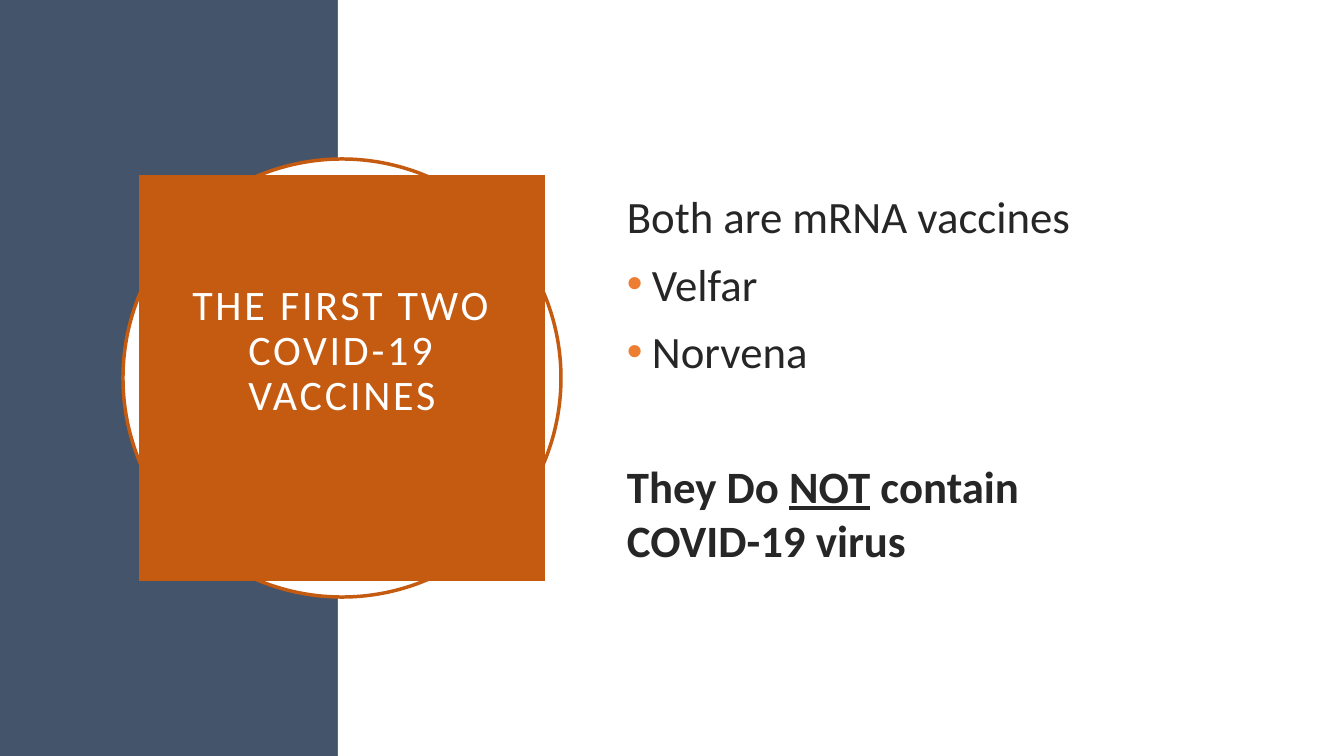
from lxml.etree import SubElement
from pptx import Presentation
from pptx.dml.color import RGBColor
from pptx.enum.shapes import MSO_SHAPE as Preset
from pptx.enum.text import MSO_ANCHOR as Anchor, PP_ALIGN as Align
from pptx.oxml.ns import qn
from pptx.util import Pt

PX = 914400 / 100.8
WIDTH, HEIGHT, SIDEBAR = 1344, 756, 338
NAVY, ORANGE, BRIGHT, WHITE, INK = "44546A", "C55A11", "ED7D31", "FFFFFF", "262626"


def px(length):
    """Turn whole pixels into EMU."""
    return round(length * PX)


def paint(color_format, code):
    """Set a colour from its hex string."""
    color_format.rgb = RGBColor.from_string(code)


def add_panel(slide, preset, box, fill, outline=None):
    """Add a filled shape, outlined only if a colour is given."""
    panel = slide.shapes.add_shape(preset, *map(px, box))
    panel.shadow.inherit = False
    panel.fill.solid()
    paint(panel.fill.fore_color, fill)
    if outline:
        paint(panel.line.color, outline)
        panel.line.width = Pt(2.5)
    else:
        panel.line.fill.background()
    return panel


def set_frame(frame, **margins):
    """Wrap and vertically centre a text frame, with margins in pixels."""
    frame.word_wrap = True
    frame.vertical_anchor = Anchor.MIDDLE
    for side, length in margins.items():
        setattr(frame, f"margin_{side}", px(length))


def add_run(paragraph, text, color, **formats):
    """Add a Calibri run with the given font values."""
    run = paragraph.add_run()
    run.text = text
    paint(run.font.color, color)
    for name, value in {"name": "Calibri", **formats}.items():
        setattr(run.font, name, value)
    return run


def add_bullet(paragraph):
    """Give a paragraph a hanging orange bullet."""
    properties = paragraph._p.get_or_add_pPr()
    properties.set("marL", str(px(25)))
    properties.set("indent", str(-px(25)))
    color = SubElement(properties, qn("a:buClr"))
    SubElement(color, qn("a:srgbClr"), val=BRIGHT)
    SubElement(properties, qn("a:buFont"), typeface="Arial")
    SubElement(properties, qn("a:buChar"), char="•")


def add_title(slide, box, text):
    """Add the orange title block with spaced capitals."""
    block = add_panel(slide, Preset.RECTANGLE, box, ORANGE)
    set_frame(block.text_frame, left=20, right=20, top=20, bottom=72)
    heading = block.text_frame.paragraphs[0]
    heading.alignment = Align.CENTER
    heading.line_spacing = 0.9
    run = add_run(heading, text, WHITE, size=Pt(30))
    run.font._element.set("spc", "200")


def add_body(slide, box, lines):
    """Add the body text from (space before, bulleted, runs) lines."""
    frame = slide.shapes.add_textbox(*map(px, box)).text_frame
    set_frame(frame)
    for index, (gap, bulleted, runs) in enumerate(lines):
        line = frame.add_paragraph() if index else frame.paragraphs[0]
        line.alignment = Align.LEFT
        line.space_before = Pt(gap)
        if bulleted:
            add_bullet(line)
        for text, formats in runs:
            add_run(line, text, INK, size=Pt(32), **formats)


def main():
    """Build and save the vaccine slide."""
    deck = Presentation()
    deck.slide_width, deck.slide_height = px(WIDTH), px(HEIGHT)
    slide = deck.slides.add_slide(deck.slide_layouts[6])

    add_panel(slide, Preset.RECTANGLE, (0, 0, SIDEBAR, HEIGHT), NAVY)
    add_panel(slide, Preset.RECTANGLE, (SIDEBAR, 0, WIDTH - SIDEBAR, HEIGHT), WHITE)
    add_panel(slide, Preset.OVAL, (123, 159, 438, 438), WHITE, ORANGE)
    add_title(slide, (139, 175, 406, 406), "THE FIRST TWO COVID-19 VACCINES")

    bold = {"bold": True}
    add_body(slide, (617, 154, 587, 447), [
        (10, False, [("Both are mRNA vaccines", {})]),
        (10, True, [("Velfar", {})]),
        (10, True, [("Norvena", {})]),
        (58, False, [
            ("They Do ", bold),
            ("NOT", {**bold, "underline": True}),
            (" contain COVID-19 virus", bold),
        ]),
    ])
    deck.save("out.pptx")


if __name__ == "__main__":
    main()
